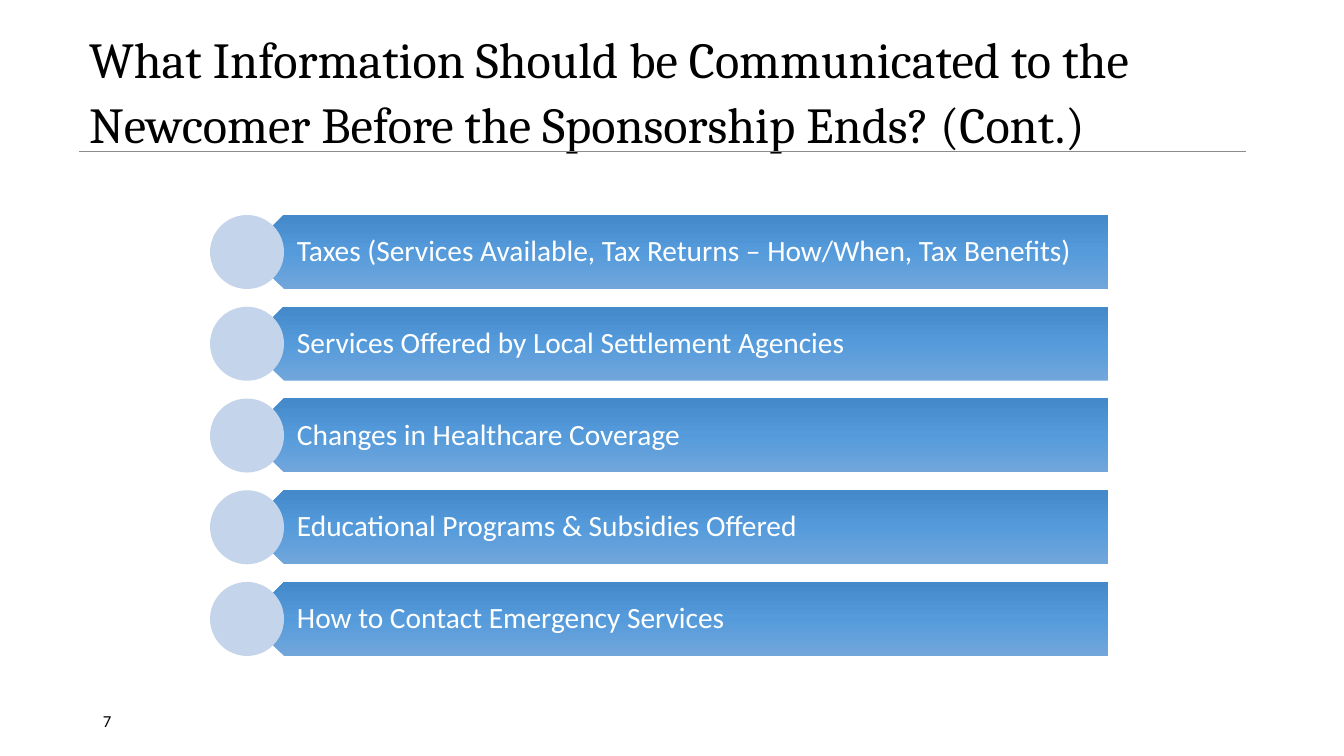
from copy import deepcopy

from lxml.etree import SubElement
from pptx import Presentation
from pptx.dml.color import RGBColor as RGB
from pptx.enum.shapes import MSO_CONNECTOR as LINE, MSO_SHAPE as SHAPE
from pptx.enum.text import MSO_ANCHOR as ANCHOR, PP_ALIGN as ALIGN
from pptx.oxml.ns import qn
from pptx.util import Pt

TITLE = ("What Information Should be Communicated to the "
         "Newcomer Before the Sponsorship Ends? (Cont.)")
TOPICS = [
    "Taxes (Services Available, Tax Returns – How/When, Tax Benefits)",
    "Services Offered by Local Settlement Agencies",
    "Changes in Healthcare Coverage",
    "Educational Programs & Subsidies Offered",
    "How to Contact Emergency Services",
]
NUMBER = "7"

BLACK = RGB(0x00, 0x00, 0x00)
WHITE = RGB(0xFF, 0xFF, 0xFF)
GRAY = RGB(0x8C, 0x8C, 0x8C)
PALE = RGB(0xC4, 0xD5, 0xEB)
BLUES = [RGB(0x71, 0xA6, 0xDB), RGB(0x55, 0x9B, 0xDB), RGB(0x44, 0x8A, 0xCA)]

SCALE = 914400 / 100.8
FIRST, LAST = 215, 582  # tops of the first and last rows
HIGH = 74               # row height and dot diameter
DOT, RIGHT = 210, 1108
BAR = DOT + HIGH // 2
LABEL = BAR + HIGH // 4


def px(*sizes):
    return [round(size * SCALE) for size in sizes]


def write(frame, text, size, font, color, insets=(10, 5, 10, 5)):
    frame.word_wrap = True
    frame.vertical_anchor = ANCHOR.MIDDLE
    (frame.margin_left, frame.margin_top,
     frame.margin_right, frame.margin_bottom) = px(*insets)
    para = frame.paragraphs[0]
    para.alignment = ALIGN.LEFT
    run = para.add_run()
    run.text = text
    run.font.size = Pt(size)
    run.font.name = font
    run.font.color.rgb = color
    return para


def add_shape(slide, kind, *box):
    shape = slide.shapes.add_shape(kind, *px(*box))
    shape.shadow.inherit = False
    shape.line.fill.background()
    return shape


def shade(fill):
    """Fill from top to bottom with the three blues."""
    fill.gradient()
    fill.gradient_angle = 270
    stops = fill._fill._gradFill.find(qn("a:gsLst"))
    stops.insert(1, deepcopy(stops[0]))
    for i, (stop, blue) in enumerate(zip(fill.gradient_stops, BLUES)):
        stop.position = i / 2
        stop.color.rgb = blue


def add_row(slide, top, topic):
    bar = add_shape(slide, SHAPE.PENTAGON, BAR, top, RIGHT - BAR, HIGH)
    bar.rotation = 180
    shade(bar.fill)
    label = slide.shapes.add_textbox(*px(LABEL, top, RIGHT - LABEL, HIGH))
    para = write(label.text_frame, topic, 21, "Calibri", WHITE, (32, 9, 16, 9))
    para.line_spacing = 0.9
    dot = add_shape(slide, SHAPE.OVAL, DOT, top, HIGH, HIGH)
    dot.fill.solid()
    dot.fill.fore_color.rgb = PALE


def main():
    deck = Presentation()
    deck.slide_width, deck.slide_height = px(1344, 756)
    slide = deck.slides.add_slide(deck.slide_layouts[5])

    title = slide.shapes.title
    title.left, title.top, title.width, title.height = px(79, 27, 1186, 124)
    para = write(title.text_frame, TITLE, 36, "Cambria", BLACK)
    para.line_spacing = 1.07
    para.space_after = Pt(8)

    number = slide.shapes.add_textbox(*px(93, 701, 302, 40))
    write(number.text_frame, NUMBER, 12, "Calibri", BLACK)

    step = (LAST - FIRST) / (len(TOPICS) - 1)
    for i, topic in enumerate(TOPICS):
        add_row(slide, FIRST + i * step, topic)

    rule = slide.shapes.add_connector(LINE.STRAIGHT, *px(79, 151, 1246, 151))
    rule.line.color.rgb = GRAY
    rule.line.width = Pt(0.5)
    SubElement(rule._element.spPr, qn("a:effectLst"))

    deck.save("out.pptx")


if __name__ == "__main__":
    main()
